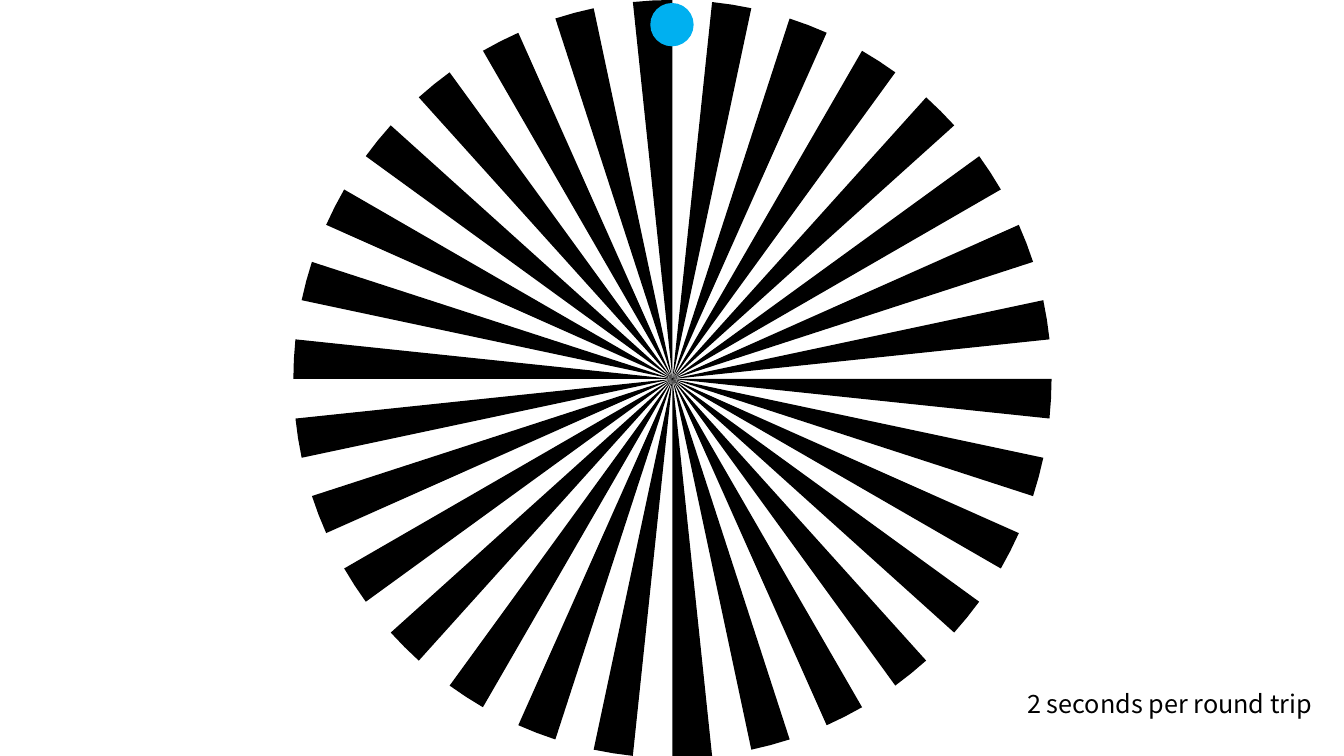
from dataclasses import dataclass
from math import cos, radians, sin

from pptx import Presentation, util as u
from pptx.dml.color import RGBColor
from pptx.enum import shapes, text


@dataclass(frozen=True)
class Theme:
    spoke: RGBColor = RGBColor(0x00, 0x00, 0x00)
    marker: RGBColor = RGBColor(0x00, 0xB0, 0xF0)
    ink: RGBColor = RGBColor(0x00, 0x00, 0x00)
    font: str = "Noto Sans CJK JP"
    caption_size: u.Pt = u.Pt(18)


@dataclass(frozen=True)
class Box:
    """A region of the slide, in inches."""
    left: float
    top: float
    width: float
    height: float

    def lengths(self):
        return [u.Inches(v) for v in (self.left, self.top, self.width, self.height)]


THEME = Theme()
SPOKES = 30
ARC_STEPS = 2


def paint(shape, color):
    shape.fill.solid()
    shape.fill.fore_color.rgb = color
    shape.line.fill.background()
    shape.shadow.inherit = False


def add_wheel(page, box):
    """Draw evenly spaced spokes, each as wide as the gap beside it."""
    radius = box.width / 2
    center = (box.left + radius, box.top + radius)
    pitch = 360 / SPOKES

    def rim_point(angle):
        turn = radians(angle)
        return (u.Inches(center[0] + radius * cos(turn)),
                u.Inches(center[1] + radius * sin(turn)))

    spokes = []
    for index in range(SPOKES):
        start = -index * pitch
        rim = [rim_point(start + pitch / 2 * step / ARC_STEPS)
               for step in range(ARC_STEPS + 1)]
        outline = page.shapes.build_freeform(u.Inches(center[0]), u.Inches(center[1]))
        outline.add_line_segments(rim, close=True)
        spoke = outline.convert_to_shape()
        paint(spoke, THEME.spoke)
        spokes.append(spoke)
    page.shapes.add_group_shape(spokes)


def add_marker(page, box):
    marker = page.shapes.add_shape(shapes.MSO_SHAPE.OVAL, *box.lengths())
    paint(marker, THEME.marker)


def add_caption(page, box, words):
    frame = page.shapes.add_textbox(*box.lengths()).text_frame
    frame.word_wrap = False
    frame.auto_size = text.MSO_AUTO_SIZE.SHAPE_TO_FIT_TEXT
    para = frame.paragraphs[0]
    para.text = words
    para.alignment = text.PP_ALIGN.LEFT
    span = para.runs[0]
    span.font.name = THEME.font
    span.font.size = THEME.caption_size
    span.font.color.rgb = THEME.ink


def main():
    deck = Presentation()
    deck.slide_width, deck.slide_height = u.Inches(13.33), u.Inches(7.5)
    page = deck.slides.add_slide(deck.slide_layouts[6])
    add_wheel(page, Box(2.91, 0, 7.52, 7.52))
    add_marker(page, Box(6.45, 0.03, 0.43, 0.43))
    add_caption(page, Box(10.09, 6.78, 3.04, 0.4), "2 seconds per round trip")
    deck.save("out.pptx")


if __name__ == "__main__":
    main()
